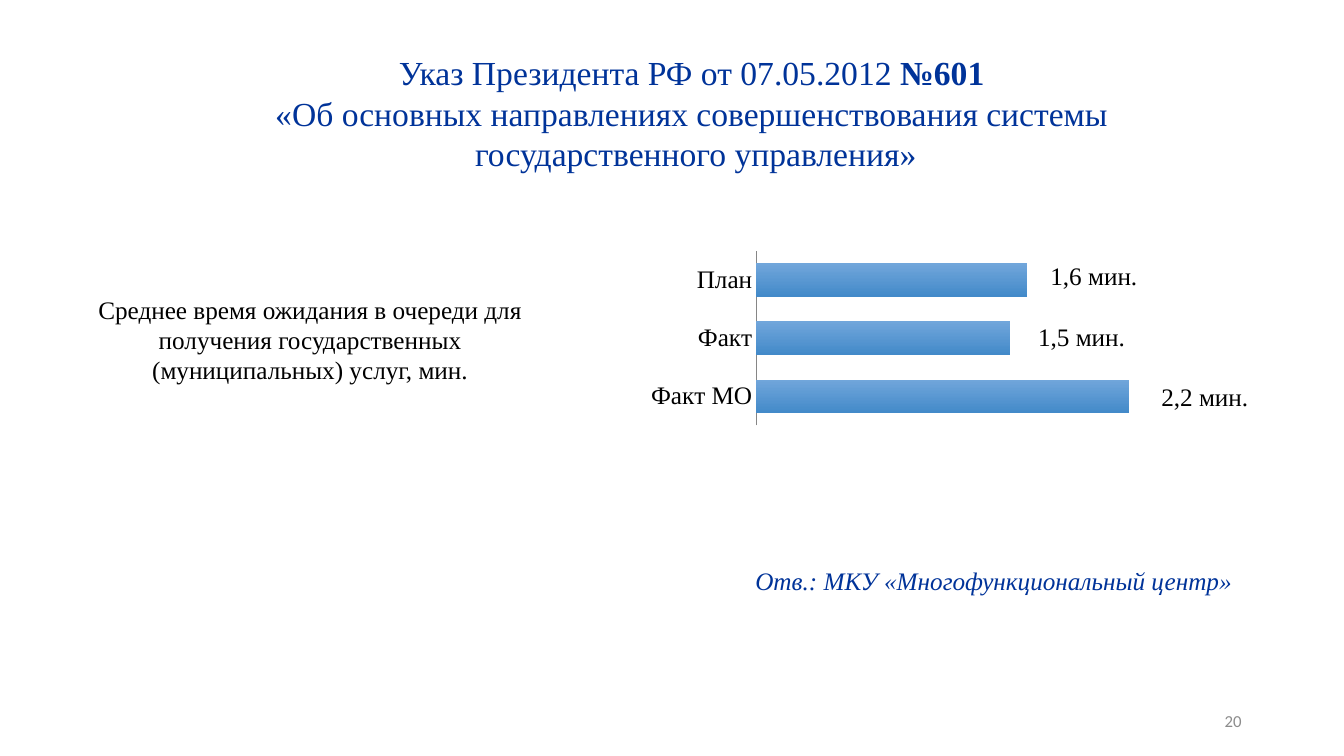
from lxml.etree import SubElement
from pptx import Presentation
from pptx.chart.data import CategoryChartData
from pptx.dml.color import RGBColor
from pptx.enum.chart import XL_CHART_TYPE, XL_LABEL_POSITION, XL_TICK_MARK
from pptx.enum.text import MSO_ANCHOR, PP_ALIGN
from pptx.oxml.ns import qn
from pptx.util import Pt

NAVY = RGBColor(0x00, 0x33, 0x99)
BLACK = RGBColor(0x00, 0x00, 0x00)
GRAY = RGBColor(0x8C, 0x8C, 0x8C)
AXIS = RGBColor(0x86, 0x86, 0x86)
LIGHT = RGBColor(0x71, 0xA6, 0xDB)
DARK = RGBColor(0x43, 0x8A, 0xC9)
SERIF = "Times New Roman"
SANS = "Calibri"
C15 = "http://schemas.microsoft.com/office/drawing/2012/chart"
LEADER = "{CE6537A1-D6FC-4f65-9D91-7224C49458BB}"


def write(par, text, font=SERIF, size=18, color=BLACK, bold=False, italic=False):
    """Add a formatted run to a paragraph."""
    run = par.add_run()
    run.text = text
    style = run.font
    style.name, style.size = font, Pt(size)
    style.bold, style.italic = bold, italic
    style.color.rgb = color


def place(parent, **parts):
    """Make a manual layout with the given parts."""
    layout = parent.makeelement(qn("c:layout"))
    manual = SubElement(layout, qn("c:manualLayout"))
    for name, value in parts.items():
        SubElement(manual, qn(f"c:{name}")).set("val", str(value))
    return layout


def unlead(node):
    """Turn off the leader lines of a set of data labels."""
    for old in node.findall(qn("c:showLeaderLines")):
        old.set("val", "0")
    ext = SubElement(SubElement(node, qn("c:extLst")), qn("c:ext"), nsmap={"c15": C15})
    ext.set("uri", LEADER)
    SubElement(ext, f"{{{C15}}}showLeaderLines").set("val", "0")


class Page:
    """Hold the slide and draw its elements."""

    def __init__(self, slide):
        self.slide = slide

    def text(self, box, lines, align=PP_ALIGN.CENTER, anchor=MSO_ANCHOR.TOP, **style):
        """Add a text box whose lines are lists of text and format pairs."""
        frame = self.slide.shapes.add_textbox(*map(Pt, box)).text_frame
        frame.word_wrap = True
        frame.vertical_anchor = anchor
        par = frame.paragraphs[0]
        par.alignment = align
        for index, line in enumerate(lines):
            if index:
                par.add_line_break()
            for words, extra in line:
                write(par, words, **{**style, **extra})

    def bars(self, box, rows, top):
        """Add a bar chart with rows of name, value, label and label shift."""
        data = CategoryChartData(number_format="0.0")
        data.categories = [row[0] for row in rows]
        data.add_series("Series 1", [row[1] for row in rows])
        kind = XL_CHART_TYPE.BAR_CLUSTERED
        chart = self.slide.shapes.add_chart(kind, *map(Pt, box), data).chart
        chart.has_legend = chart.has_title = False
        chart.font.name, chart.font.size = SANS, Pt(18)
        chart.font.color.rgb = BLACK

        names, scale = chart.category_axis, chart.value_axis
        names.major_tick_mark = names.minor_tick_mark = XL_TICK_MARK.NONE
        names.tick_labels.font.name = SERIF
        names.tick_labels.font.size = Pt(18)
        names.format.line.color.rgb = AXIS
        names.format.line.width = Pt(0.75)
        scale.visible = scale.has_major_gridlines = False
        scale.minimum_scale, scale.maximum_scale = 0, top

        plot = chart.plots[0]
        plot.gap_width, plot.vary_by_categories = 75, False
        area = chart.element.find(".//" + qn("c:plotArea"))
        for old in area.findall(qn("c:layout")):
            area.remove(old)
        area.insert(0, place(area, layoutTarget="inner", xMode="edge", yMode="edge",
                             x=0.197, y=0.108, w=0.647, h=0.639))

        series = plot.series[0]
        fill = series.format.fill
        fill.gradient()
        fill.gradient_angle = 270
        for stop, color in zip(fill.gradient_stops, (LIGHT, DARK)):
            stop.color.rgb = color

        labels = series.data_labels
        labels.show_value = True
        for ticks in (labels, scale.tick_labels):
            ticks.number_format, ticks.number_format_is_linked = "0.0", False
        labels.font.name, labels.font.size = SERIF, Pt(18)
        labels.position = XL_LABEL_POSITION.OUTSIDE_END
        for index, (_, _, words, shift) in enumerate(rows):
            label = series.points[index].data_label
            write(label.text_frame.paragraphs[0], words)
            label.position = XL_LABEL_POSITION.OUTSIDE_END
            node = labels._element.findall(qn("c:dLbl"))[index]
            node.insert(1, place(node, x=shift[0], y=shift[1]))
        unlead(labels._element)


def main():
    """Build the slide and save it."""
    deck = Presentation()
    deck.slide_width, deck.slide_height = Pt(960), Pt(540)
    page = Page(deck.slides.add_slide(deck.slide_layouts[6]))
    page.text((678, 500.5, 216, 28.75), [[("20", {})]], align=PP_ALIGN.RIGHT,
              anchor=MSO_ANCHOR.MIDDLE, font=SANS, size=12, color=GRAY)
    page.text((62.5, 206.5, 318, 72.7), [[(
        "Среднее время ожидания в очереди для получения государственных "
        "(муниципальных) услуг, мин.", {})]])
    page.bars((448, 158.2, 468, 195), [
        ("Факт МО", 2.2, "2,2 мин.", (0.043, 0.005)),
        ("Факт", 1.5, "1,5 мин.", (0.036, 0)),
        ("План", 1.6, "1,6 мин.", (0.029, -0.01)),
    ], top=2.5)
    page.text((512.5, 400.5, 394.5, 29),
              [[("Отв.: МКУ «Многофункциональный центр»", {})]],
              color=NAVY, italic=True)
    page.text((50, 33.7, 894, 94.5), [
        [("Указ Президента РФ от 07.05.2012 ", {}), ("№601 ", {"bold": True})],
        [("«Об основных направлениях совершенствования системы ", {})],
        [("государственного управления»", {})],
    ], size=24, color=NAVY)
    deck.save("out.pptx")


if __name__ == "__main__":
    main()
